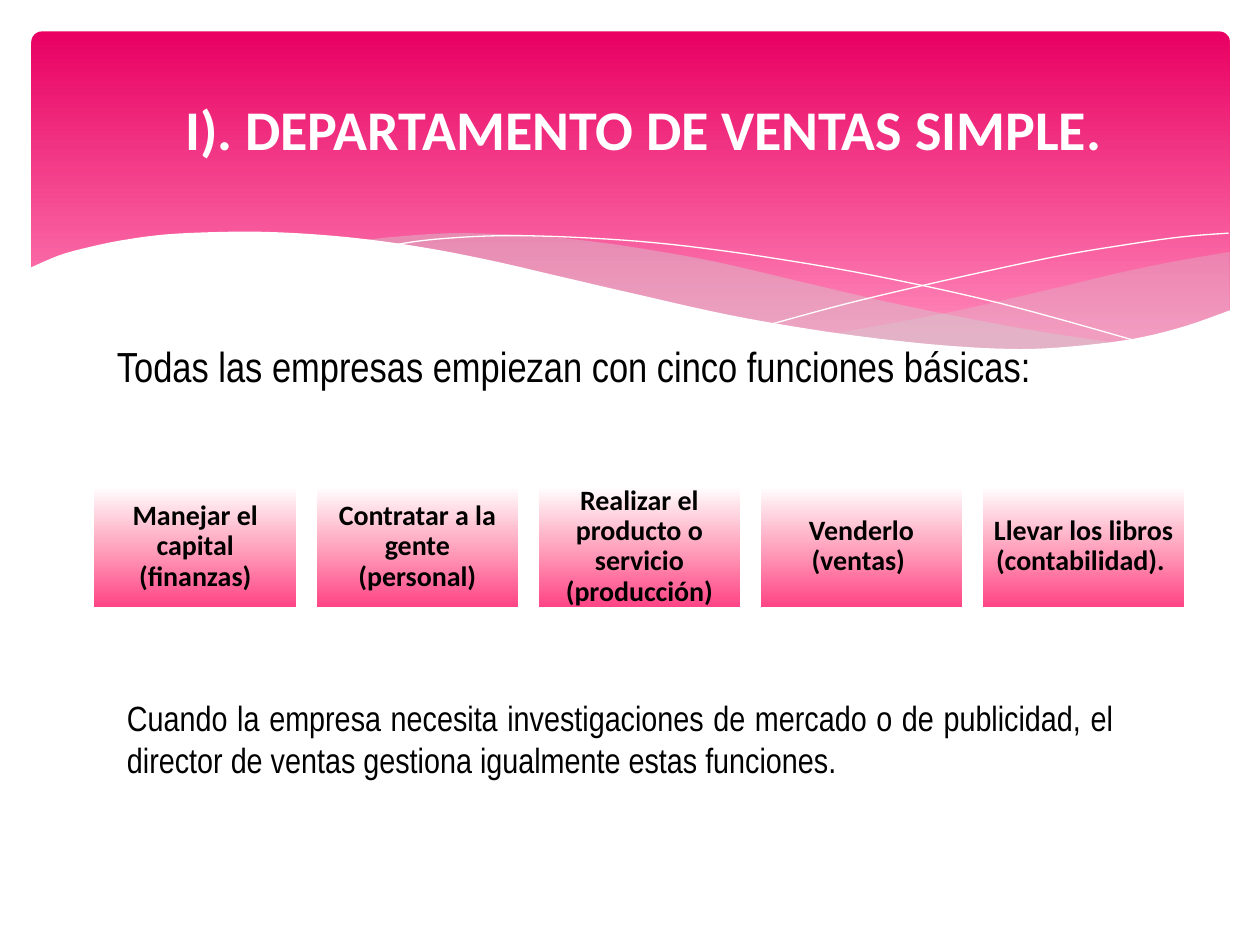
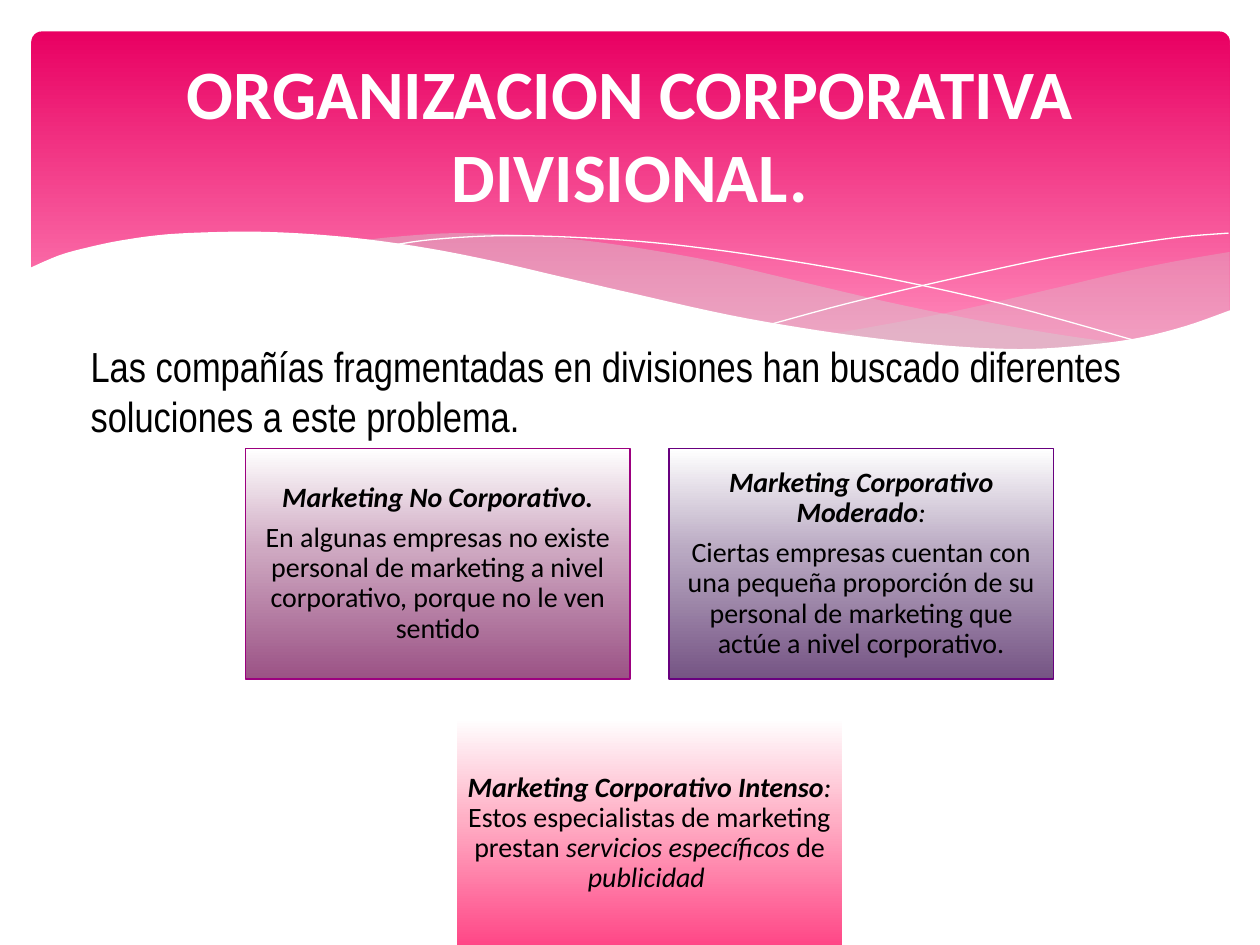
import pptx
import pptx.util
import pptx.dml.color
import pptx.enum.shapes
import pptx.enum.text
import pptx.oxml.ns
import lxml.etree

Inches, Pt = pptx.util.Inches, pptx.util.Pt
ALIGN = pptx.enum.text.PP_ALIGN
ANCHOR = pptx.enum.text.MSO_ANCHOR
KINDS = pptx.enum.shapes.MSO_SHAPE
qn = pptx.oxml.ns.qn

HEX = {"white": "FFFFFF", "black": "000000", "veil": "D2D2D2",
       "rose": "E90062", "blush": "FF88BA", "plum": "9C007F", "grape": "68007F"}
# Gradient stops: (percent, colour)
BAND = [(0, HEX["rose"]), (90, HEX["blush"])]
PINK = [(0, HEX["white"]), (44, "FFAFC5"), (100, "FF4485")]
MAUVE = [(0, HEX["white"]), (44, "CEA8C1"), (100, "9B5285")]
VIOLET = [(0, HEX["white"]), (44, "B9A9C2"), (100, "755484")]
HEAD, BODY = "Calibri", "Arial Narrow"

# Knots of the waves under the title band
TAIL_TOP = [(9.76, 2), (9.35, 2.07), (8.91, 2.16), (8.32, 2.3), (7.53, 2.48), (6.61, 2.65)]
TAIL_LOW = [(6.61, 2.65), (7.05, 2.71), (7.57, 2.76), (8.14, 2.78), (8.72, 2.74),
            (9.21, 2.65), (9.76, 2.47)]
CREST_TOP = [(8.93, 2.73), (8.37, 2.65), (7.75, 2.54), (7.06, 2.4), (6.29, 2.22),
             (5.69, 2.08), (5.14, 1.98), (4.65, 1.91), (4.2, 1.87), (3.61, 1.85),
             (3.13, 1.88), (2.86, 1.91)]
CREST_LOW = [(2.86, 1.91), (3.42, 1.99), (4.04, 2.11), (4.91, 2.32), (5.66, 2.48),
             (6.34, 2.61), (6.95, 2.7), (7.48, 2.76), (8.07, 2.78), (8.57, 2.77),
             (8.93, 2.73)]
FALL = [(3.09, 1.95), (3.44, 1.9), (4.01, 1.87), (4.69, 1.89), (5.33, 1.94),
        (6.08, 2.04), (6.95, 2.19), (7.95, 2.41), (9.07, 2.72)]
RISE = [(6.13, 2.57), (6.72, 2.41), (7.48, 2.23), (8.36, 2.04), (8.95, 1.94),
        (9.38, 1.88), (9.75, 1.85)]
FLOOR = [(9.77, 2.46), (9.4, 2.59), (8.99, 2.69), (8.5, 2.75), (8.09, 2.77),
         (7.61, 2.75), (7.08, 2.7), (6.48, 2.62), (5.79, 2.5), (5.03, 2.33),
         (4.47, 2.2), (3.91, 2.07), (3.4, 1.97), (2.92, 1.9), (2.5, 1.86),
         (2.11, 1.84), (1.77, 1.84), (1.32, 1.86), (0.95, 1.91), (0.67, 1.97),
         (0.46, 2.03), (0.23, 2.13)]


def color(code):
    return pptx.dml.color.RGBColor.from_string(code)


def curve(knots, steps=5):
    """Smooth run of points through the knots (Catmull-Rom)."""
    ends = [knots[0], *knots, knots[-1]]
    points = [knots[0]]
    for a, b, c, d in zip(ends, ends[1:], ends[2:], ends[3:]):
        for k in range(1, steps + 1):
            t = k / steps
            points.append(tuple(
                (2 * q + (r - p) * t + (2 * p - 5 * q + 4 * r - s) * t ** 2
                 + (3 * q - p - 3 * r + s) * t ** 3) / 2
                for p, q, r, s in zip(a, b, c, d)))
    return points


def shade(shape, stops):
    """Fill from top to bottom with the given stops."""
    shape.fill.gradient()
    shape.fill.gradient_angle = 270
    bar = shape.fill._xPr.find(qn("a:gradFill")).find(qn("a:gsLst"))
    for stop in list(bar):
        bar.remove(stop)
    for part, code in stops:
        stop = lxml.etree.SubElement(bar, qn("a:gs"), pos=str(part * 1000))
        lxml.etree.SubElement(stop, qn("a:srgbClr"), val=code)


def edge(shape, code=None, width=0):
    shape.shadow.inherit = False
    if code:
        shape.line.color.rgb = color(code)
        shape.line.width = Pt(width)
    else:
        shape.line.fill.background()


def block(slide, kind, box, stops, rim=None):
    shape = slide.shapes.add_shape(kind, *map(Inches, box))
    shade(shape, stops)
    edge(shape, rim, 0.75)
    return shape


def trace(slide, points, fill=None, alpha=100, line=None):
    spots = [(Inches(x), Inches(y)) for x, y in points]
    pen = slide.shapes.build_freeform(*spots[0], scale=1.0)
    pen.add_line_segments(spots[1:], close=fill is not None)
    shape = pen.convert_to_shape()
    edge(shape, line)
    if fill is None:
        shape.fill.background()
        return
    shape.fill.solid()
    shape.fill.fore_color.rgb = color(fill)
    if alpha < 100:
        tint = shape.fill._xPr.find(qn("a:solidFill"))[0]
        lxml.etree.SubElement(tint, qn("a:alpha"), val=str(alpha * 1000))


def write(shape, paras, size, face, code, align, anchor=ANCHOR.TOP):
    """Each paragraph is a list of (text, style) runs; style holds b and i."""
    frame = shape.text_frame
    frame.word_wrap = True
    frame.vertical_anchor = anchor
    for n, runs in enumerate(paras):
        para = frame.add_paragraph() if n else frame.paragraphs[0]
        para.alignment = align
        for text, style in runs:
            run = para.add_run()
            run.text = text
            font = run.font
            font.name, font.size = face, Pt(size)
            font.bold, font.italic = "b" in style, "i" in style
            font.color.rgb = color(code)
    return frame


def label(slide, box, text, size, face=BODY, code="black", style="",
          align=ALIGN.LEFT, anchor=ANCHOR.TOP):
    shape = slide.shapes.add_textbox(*map(Inches, box))
    return write(shape, [[(text, style)]], size, face, HEX[code], align, anchor)


def banner(slide):
    """Title band with its waves."""
    band = block(slide, KINDS.ROUNDED_RECTANGLE, (0.25, 0.25, 9.51, 2.7), BAND)
    band.adjustments[0] = 0.03
    trace(slide, curve(TAIL_TOP) + curve(TAIL_LOW), HEX["veil"], 29)
    trace(slide, curve(CREST_TOP) + curve(CREST_LOW), HEX["veil"], 40)
    for knots in (FALL, RISE):
        trace(slide, curve(knots), line=HEX["white"])
    trace(slide, curve(FLOOR) + [(0.23, 3.29), (9.77, 3.29)], HEX["white"])


def title(slide, box, text, size):
    return label(slide, box, text, size, HEAD, "white", "b", ALIGN.CENTER, ANCHOR.MIDDLE)


def card(slide, box, paras, stops=PINK, rim=None):
    shape = block(slide, KINDS.RECTANGLE, box, stops, rim)
    frame = write(shape, paras, 16, HEAD, HEX["black"], ALIGN.CENTER, ANCHOR.MIDDLE)
    frame.margin_left = frame.margin_right = Inches(0.07)
    frame.margin_top = frame.margin_bottom = Inches(0.07)
    for para in frame.paragraphs:
        para.line_spacing = 0.9
        para.space_after = Pt(5.6)


def row(slide, box, texts, wide=1.6):
    """Equal cards spread over the width of the box."""
    left, top, width, high = box
    pitch = (width - wide) / (len(texts) - 1)
    for n, text in enumerate(texts):
        card(slide, (left + n * pitch, top, wide, high), [[(text, "b")]])


def trio(slide, box, cards, gap=0.31):
    """Two cards above and one centred below."""
    left, top, width, height = box
    wide, high = (width - gap) / 2, (height - gap) / 2
    across, down = wide + gap, high + gap
    spots = [(0, 0), (across, 0), (across / 2, down)]
    for (x, y), (paras, stops, rim) in zip(spots, cards):
        card(slide, (left + x, top + y, wide, high), paras, stops, rim)


def sales(slide):
    banner(slide)
    label(slide, (0.83, 2.65, 8.1, 0.94),
          "Todas las empresas empiezan con cinco funciones básicas:", 24)
    head = title(slide, (0.61, 0.6, 9, 1.37), "I). DEPARTAMENTO DE VENTAS SIMPLE.", 32)
    head.margin_bottom = Inches(0.59)  # lifts the single line
    row(slide, (0.75, 3.86, 8.65, 0.96), [
        "Manejar el capital (finanzas)",
        "Contratar a la gente (personal)",
        "Realizar el producto o servicio (producción)",
        "Venderlo (ventas) ",
        "Llevar los libros (contabilidad). "])
    label(slide, (0.91, 5.48, 8.03, 1.11),
          "Cuando la empresa necesita investigaciones de mercado o de publicidad, "
          "el director de ventas gestiona igualmente estas funciones.",
          20, align=ALIGN.JUSTIFY)


def groups(slide):
    banner(slide)
    label(slide, (0.62, 2.65, 8.71, 0.94),
          "Las compañías fragmentadas en divisiones han buscado diferentes "
          "soluciones a este problema.", 24)
    title(slide, (0.5, 0.37, 9, 1.37), "ORGANIZACION CORPORATIVA DIVISIONAL.", 39.6)
    none = [[("Marketing No Corporativo.", "bi")],
            [("En algunas empresas no existe personal de marketing a nivel "
              "corporativo, porque no le ven sentido", "")]]
    some = [[("Marketing Corporativo Moderado", "bi"), (":", "i")],
            [("Ciertas empresas cuentan con una pequeña proporción de su personal "
              "de marketing que actúe a nivel corporativo.", "")]]
    full = [[("Marketing Corporativo Intenso", "bi"), (": ", "i"),
             ("Estos especialistas de marketing prestan ", ""),
             ("servicios específicos ", "i"), ("de ", ""), ("publicidad ", "i")]]
    trio(slide, (1.95, 3.56, 6.41, 3.97), [
        (none, MAUVE, HEX["plum"]), (some, VIOLET, HEX["grape"]), (full, PINK, None)])


def main():
    deck = pptx.Presentation()
    deck.slide_width, deck.slide_height = Inches(10), Inches(7.5)
    for build in (sales, groups):
        build(deck.slides.add_slide(deck.slide_layouts[6]))
    deck.save("out.pptx")


if __name__ == "__main__":
    main()
